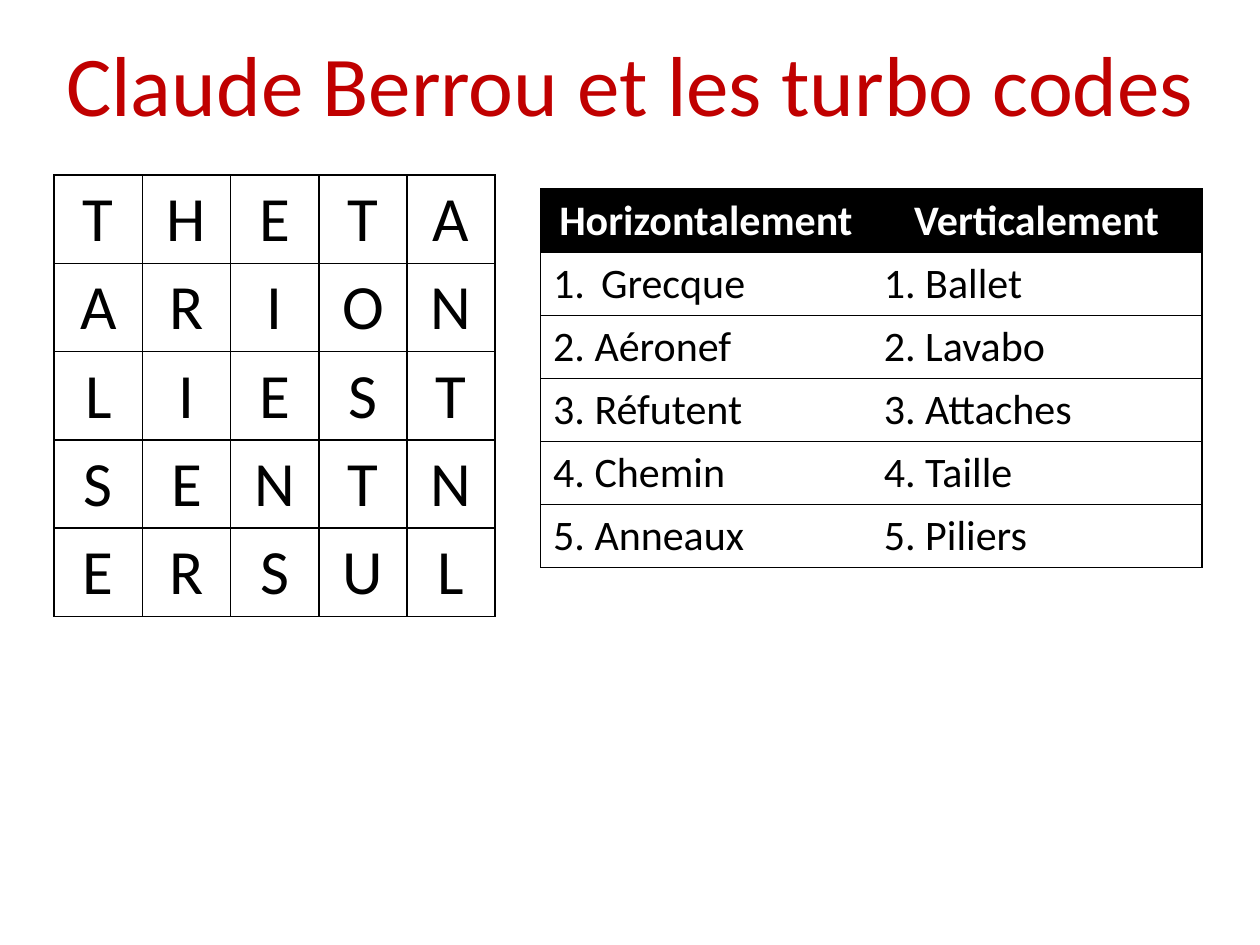
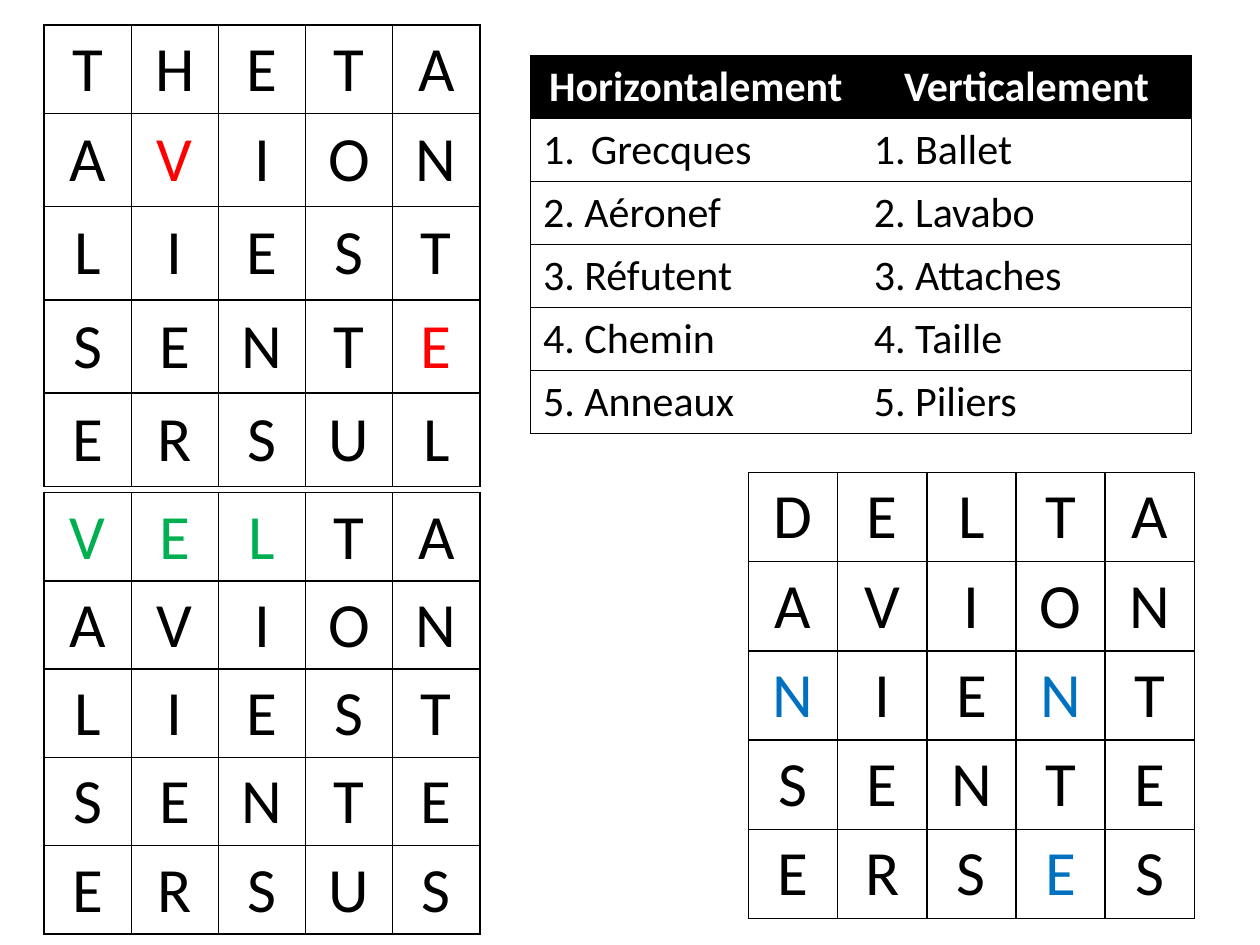
from lxml import etree
from pptx import Presentation
from pptx.dml.color import RGBColor
from pptx.enum.text import MSO_ANCHOR, PP_ALIGN
from pptx.oxml.ns import qn
from pptx.util import Inches, Pt

LEFT, CENTER = PP_ALIGN.LEFT, PP_ALIGN.CENTER
TOP, MIDDLE = MSO_ANCHOR.TOP, MSO_ANCHOR.MIDDLE

FONT = "Calibri"
BLACK, WHITE = "000000", "FFFFFF"
CRIMSON, RED, GREEN, BLUE = "C00000", "FF0000", "00B050", "0070C0"

HEADS = ("Horizontalement", "Verticalement")
ACROSS = ("Aéronef", "Réfutent", "Chemin", "Anneaux")
DOWN = ("Ballet", "Lavabo", "Attaches", "Taille", "Piliers")


def color(code):
    return RGBColor.from_string(code)


def write(frame, text, size=24, ink=BLACK, bold=False, align=LEFT):
    """Put one formatted line in a text frame and return its paragraph."""
    para = frame.paragraphs[0]
    para.alignment = align
    run = para.add_run()
    run.text = text
    font = run.font
    font.name, font.size, font.bold = FONT, Pt(size), bold
    font.color.rgb = color(ink)
    return para


def number(para, indent=0.38):
    """Turn a paragraph into an automatically numbered item."""
    props = para._p.get_or_add_pPr()
    props.set("marL", str(Inches(indent)))
    props.set("indent", str(-Inches(indent)))
    etree.SubElement(props, qn("a:buFont"), typeface="+mj-lt")
    etree.SubElement(props, qn("a:buAutoNum"), type="arabicPeriod")


def style(cell, fill, sides, width, anchor):
    """Set the borders on the named sides, then the fill and anchor."""
    props = cell._tc.get_or_add_tcPr()
    for side in "LRTB":
        line = etree.SubElement(props, qn("a:ln" + side), w=str(Pt(width)))
        if side in sides:
            solid = etree.SubElement(line, qn("a:solidFill"))
            etree.SubElement(solid, qn("a:srgbClr"), val=BLACK)
        else:
            etree.SubElement(line, qn("a:noFill"))
    cell.fill.solid()
    cell.fill.fore_color.rgb = color(fill)
    cell.vertical_anchor = anchor


def add_table(slide, box, heights, count):
    """Add an unbanded table with equal columns."""
    table = slide.shapes.add_table(len(heights), count,
                                   *map(Inches, box)).table
    table.first_row = table.horz_banding = False
    for row, height in zip(table.rows, heights):
        row.height = Inches(height)
    for col in table.columns:
        col.width = Inches(box[2] / count)
    return table


def add_title(slide, box, text):
    frame = slide.shapes.add_textbox(*map(Inches, box)).text_frame
    frame.word_wrap = True
    frame.vertical_anchor = MIDDLE
    write(frame, text, size=48.6, ink=CRIMSON, align=CENTER)


def add_grid(slide, box, words, marks=(), ink=BLACK, first=None):
    """Letter grid; marks lists the (row, column) cells drawn in ink."""
    left, top, width, height = box
    rest = len(words) - 1
    first = first or height / len(words)
    heights = [first] + [(height - first) / rest] * rest
    table = add_table(slide, box, heights, len(words[0]))
    for r, word in enumerate(words):
        for c, letter in enumerate(word):
            cell = table.cell(r, c)
            style(cell, WHITE, "LRTB", 1, MIDDLE)
            write(cell.text_frame, letter, size=36, align=CENTER,
                  ink=ink if (r, c) in marks else BLACK)


def add_clues(slide, box, start):
    """Two columns of clues, ruled between rows and around the edge."""
    rows = [HEADS, *zip((start, *ACROSS), DOWN)]
    table = add_table(slide, box, [box[3] / len(rows)] * len(rows), 2)
    for r, pair in enumerate(rows):
        for c, text in enumerate(pair):
            cell = table.cell(r, c)
            style(cell, WHITE if r else BLACK, "TB" + "LR"[c], 0.75,
                  TOP if r else MIDDLE)
            frame = cell.text_frame
            if r == 0:
                write(frame, text, ink=WHITE, bold=True, align=CENTER)
            elif (r, c) == (1, 0):
                number(write(frame, text))
            else:
                write(frame, f"{r}. {text}")


def build_puzzle(slide):
    add_title(slide, (0, 0, 10, 1.31), "Claude Berrou et les turbo codes")
    add_grid(slide, (0.43, 1.39, 3.5, 3.5),
             ("THETA", "ARION", "LIEST", "SENTN", "ERSUL"))
    add_clues(slide, (4.29, 1.5, 5.25, 3), "Grecque")


def build_steps(slide):
    # First pass, corrected across
    add_grid(slide, (0.35, 0.2, 3.46, 3.66),
             ("THETA", "AVION", "LIEST", "SENTE", "ERSUL"),
             marks=((1, 1), (3, 4)), ink=RED, first=0.7)
    add_clues(slide, (4.21, 0.44, 5.25, 3), "Grecques")
    # Second pass, corrected down
    add_grid(slide, (0.35, 3.91, 3.46, 3.5),
             ("VELTA", "AVION", "LIEST", "SENTE", "ERSUS"),
             marks=((0, 0), (0, 1), (0, 2)), ink=GREEN)
    # Solution
    add_grid(slide, (5.94, 3.75, 3.54, 3.54),
             ("DELTA", "AVION", "NIENT", "SENTE", "ERSES"),
             marks=((2, 0), (2, 3), (4, 3)), ink=BLUE)


def main():
    deck = Presentation()
    deck.slide_width, deck.slide_height = Inches(10), Inches(7.5)
    blank = deck.slide_layouts[6]
    for build in (build_puzzle, build_steps):
        build(deck.slides.add_slide(blank))
    deck.save("out.pptx")


if __name__ == "__main__":
    main()
